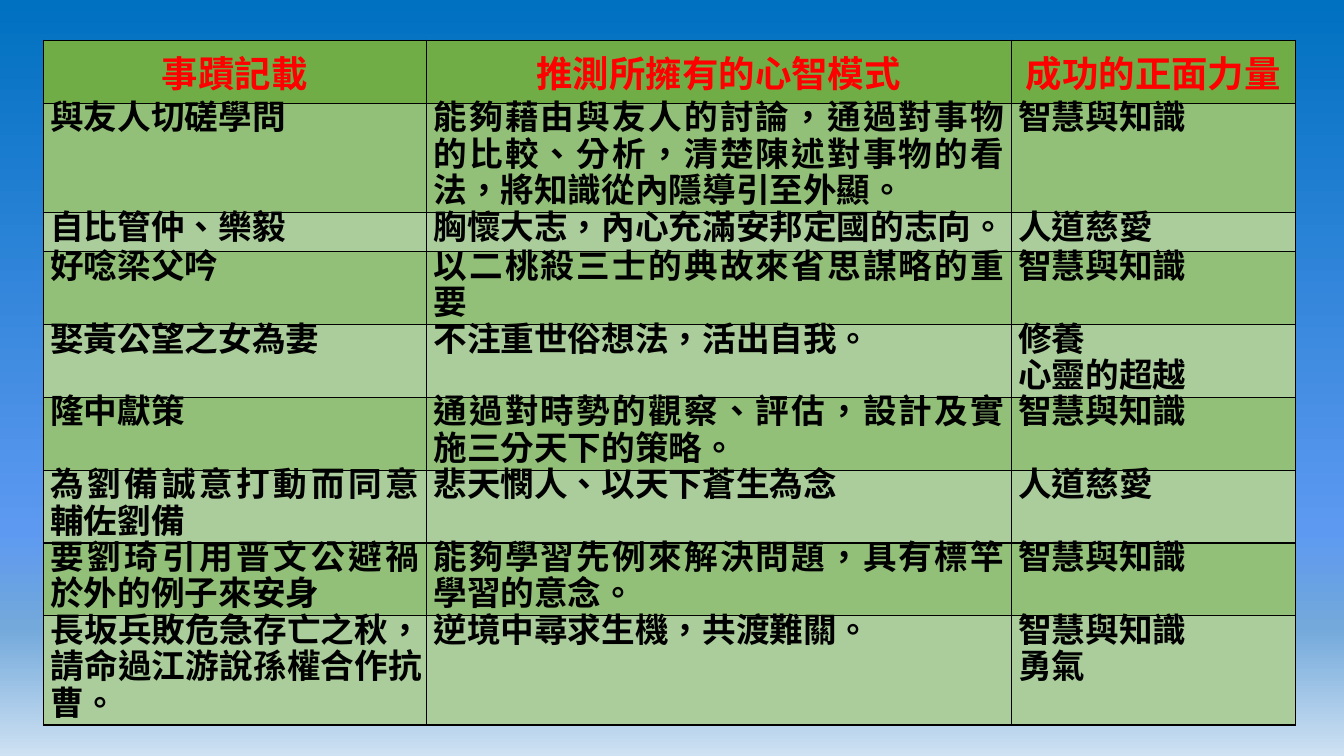
from dataclasses import dataclass

from pptx import Presentation
from pptx.dml.color import RGBColor as Color
from pptx.enum.lang import MSO_LANGUAGE_ID as Language
from pptx.enum.text import MSO_ANCHOR as Anchor, PP_ALIGN as Align
from pptx.oxml import parse_xml
from pptx.oxml.ns import nsdecls
from pptx.util import Inches, Pt


@dataclass(frozen=True)
class Theme:
    """Colours, type sizes and cell margins of the slide."""
    font: str = "Noto Sans CJK SC"
    header_size: int = 26
    body_size: int = 24
    line_size: int = 26
    margin: float = 0.07
    tight_margin: float = 0.04
    header_text: str = "FF0000"
    body_text: str = "000000"
    border: str = "000000"
    header_fill: str = "70AD47"
    band_fills: tuple = ("93C079", "AACD9B")
    sky: tuple = ((0, "0070C0"), (70, "5D99F1"), (83, "73A9DB"), (100, "CEE1F2"))


HEADERS = ("事蹟記載", "推測所擁有的心智模式", "成功的正面力量")
DEEDS = (
    (3, "與友人切磋學問",
     "能夠藉由與友人的討論，通過對事物的比較、分析，清楚陳述對事物的看法，將知識從內隱導引至外顯。",
     "智慧與知識"),
    (1, "自比管仲、樂毅", "胸懷大志，內心充滿安邦定國的志向。", "人道慈愛"),
    (2, "好唸梁父吟", "以二桃殺三士的典故來省思謀略的重要", "智慧與知識"),
    (2, "娶黃公望之女為妻", "不注重世俗想法，活出自我。", "修養\n心靈的超越"),
    (2, "隆中獻策", "通過對時勢的觀察、評估，設計及實施三分天下的策略。", "智慧與知識"),
    (2, "為劉備誠意打動而同意輔佐劉備", "悲天憫人、以天下蒼生為念", "人道慈愛"),
    (2, "要劉琦引用晋文公避禍於外的例子來安身",
     "能夠學習先例來解決問題，具有標竿學習的意念。", "智慧與知識"),
    (3, "長坂兵敗危急存亡之秋，請命過江游說孫權合作抗曹。",
     "逆境中尋求生機，共渡難關。", "智慧與知識\n勇氣"),
)
COLUMN_WIDTHS = (3.8, 5.8, 2.82)
HEADER_HEIGHT, LINE_HEIGHT, LEAST_HEIGHT = 0.62, 0.36, 0.39


class SlideBuilder:
    """Draws styled elements on the current slide."""

    def __init__(self, page, theme):
        self.page = page
        self.theme = theme

    def background(self):
        """Fill the page with the vertical sky gradient."""
        fill = self.page.background.fill
        fill.gradient()
        fill.gradient_angle = 270
        stops = self.page.element.xpath(".//a:gsLst")[0]
        for stop in list(stops):
            stops.remove(stop)
        for percent, colour in self.theme.sky:
            stops.append(parse_xml(
                f'<a:gs {nsdecls("a")} pos="{percent * 1000}">'
                f'<a:srgbClr val="{colour}"/></a:gs>'))

    def table(self, left, top, widths, heights):
        """Add an unbanded table with the given column and row sizes."""
        frame = self.page.shapes.add_table(
            len(heights), len(widths), Inches(left), Inches(top),
            Inches(sum(widths)), Inches(sum(heights)))
        table = frame.table
        table.horz_banding = False
        for column, width in zip(table.columns, widths):
            column.width = Inches(width)
        for row, height in zip(table.rows, heights):
            row.height = Inches(height)
        return table

    def borders(self, cell):
        """Draw a thin line on every side of a cell."""
        properties = cell._tc.get_or_add_tcPr()
        for index, side in enumerate(("lnL", "lnR", "lnT", "lnB")):
            properties.insert(index, parse_xml(
                f'<a:{side} {nsdecls("a")} w="12700"><a:solidFill>'
                f'<a:srgbClr val="{self.theme.border}"/></a:solidFill></a:{side}>'))

    def cell(self, cell, text, fill, size, colour, align):
        """Write styled paragraphs into a filled, bordered cell."""
        cell.text = text
        cell.fill.solid()
        cell.fill.fore_color.rgb = Color.from_string(fill)
        self.borders(cell)
        for para in cell.text_frame.paragraphs:
            para.alignment = align
            font = para.font
            font.name = self.theme.font
            font.size = Pt(size)
            font.bold = True
            font.color.rgb = Color.from_string(colour)
            para._p.xpath("./a:pPr/a:defRPr")[0].append(parse_xml(
                f'<a:ea {nsdecls("a")} typeface="{self.theme.font}"/>'))
            for span in para.runs:
                span.font.language_id = Language.TRADITIONAL_CHINESE

    def header_cell(self, cell, text):
        """Write a centred column heading."""
        theme = self.theme
        self.cell(cell, text, theme.header_fill, theme.header_size,
                  theme.header_text, Align.CENTER)

    def side_margin(self, text, width):
        """Return a margin that keeps a line-ending mark inside the cell."""
        theme = self.theme
        capacity = int((width - 2 * theme.margin) * 72 / theme.body_size)
        overflow = text[capacity:capacity + 1]
        return theme.tight_margin if overflow in ("，", "。") else theme.margin

    def body_cell(self, cell, text, fill, align, width):
        """Write a body cell with tight margins and fixed line spacing."""
        theme = self.theme
        self.cell(cell, text, fill, theme.body_size, theme.body_text, align)
        cell.margin_left = Inches(theme.margin)
        cell.margin_right = Inches(self.side_margin(text, width))
        cell.margin_top = cell.margin_bottom = 0
        cell.vertical_anchor = Anchor.TOP
        for para in cell.text_frame.paragraphs:
            para.line_spacing = Pt(theme.line_size)


def main():
    """Build the slide and save the deck."""
    deck = Presentation()
    deck.slide_width, deck.slide_height = Inches(13.33), Inches(7.5)
    page = deck.slides.add_slide(deck.slide_layouts[6])
    theme = Theme()
    builder = SlideBuilder(page, theme)
    builder.background()

    heights = [HEADER_HEIGHT]
    heights += [max(LEAST_HEIGHT, LINE_HEIGHT * lines) for lines, *_ in DEEDS]
    table = builder.table(0.43, 0.4, COLUMN_WIDTHS, heights)
    for column, heading in enumerate(HEADERS):
        builder.header_cell(table.cell(0, column), heading)
    aligns = (Align.JUSTIFY, Align.JUSTIFY, Align.LEFT)
    for row, (_, *texts) in enumerate(DEEDS, start=1):
        fill = theme.band_fills[(row - 1) % 2]
        for column, (text, align) in enumerate(zip(texts, aligns)):
            builder.body_cell(table.cell(row, column), text, fill, align,
                              COLUMN_WIDTHS[column])
    deck.save("out.pptx")


if __name__ == "__main__":
    main()
